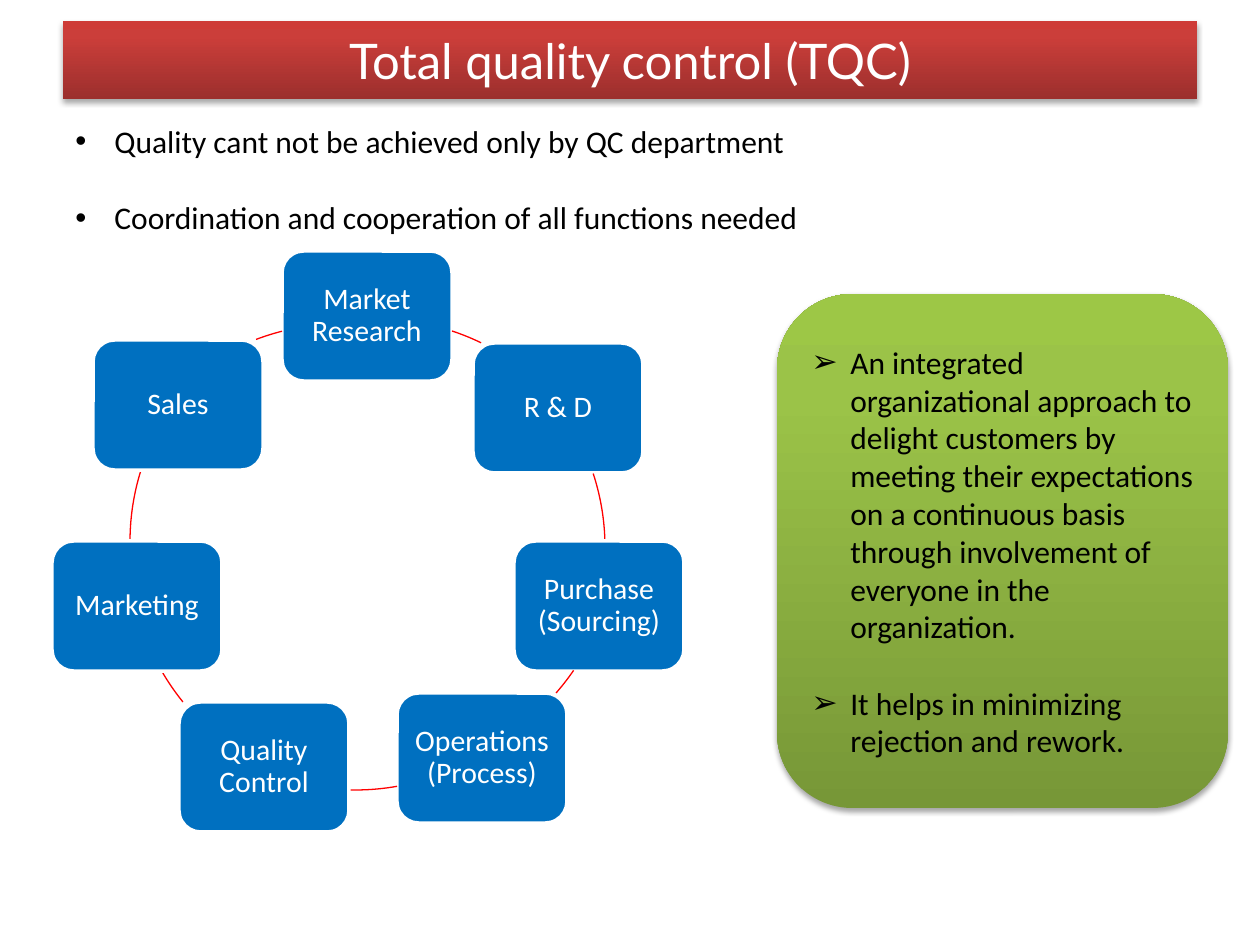
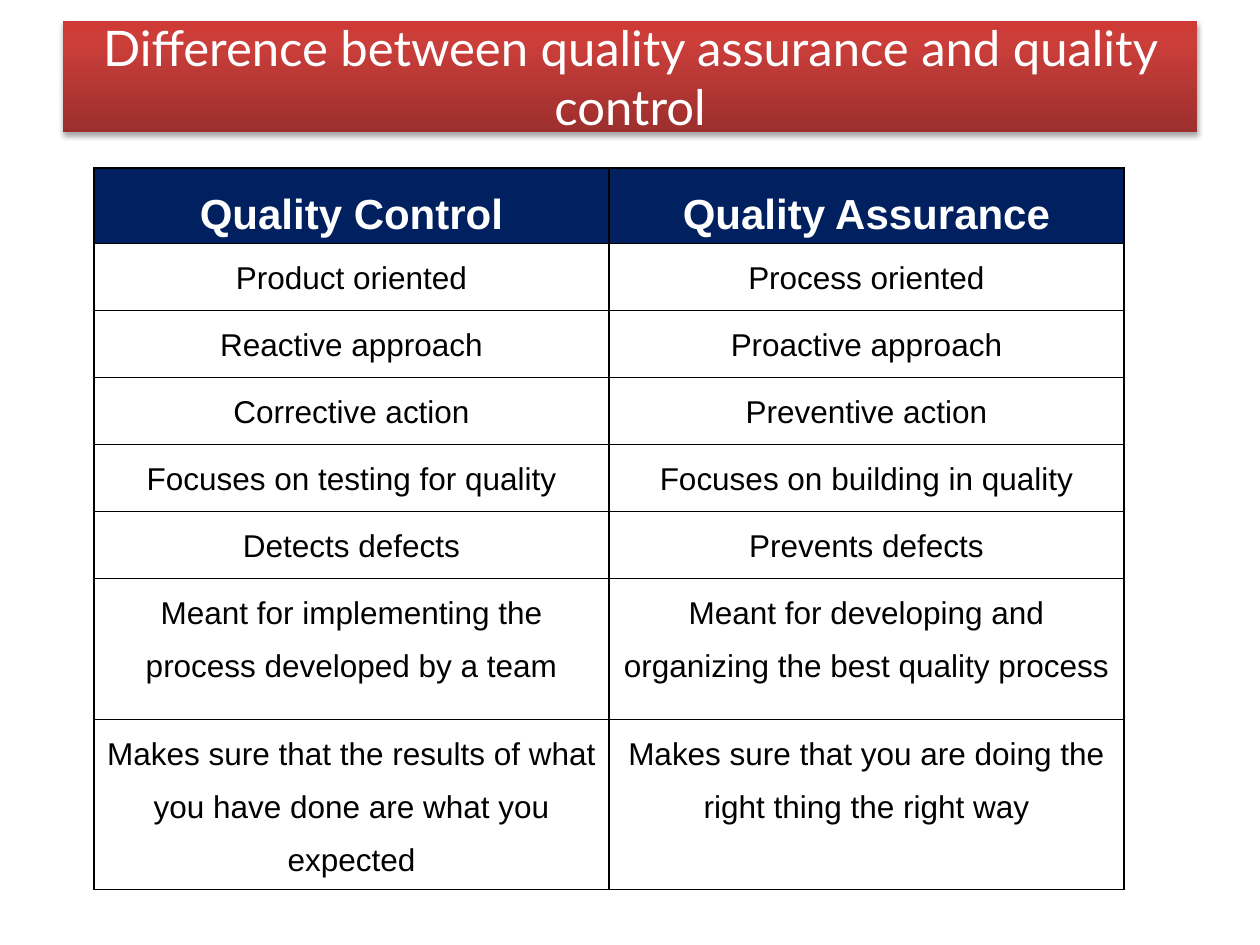
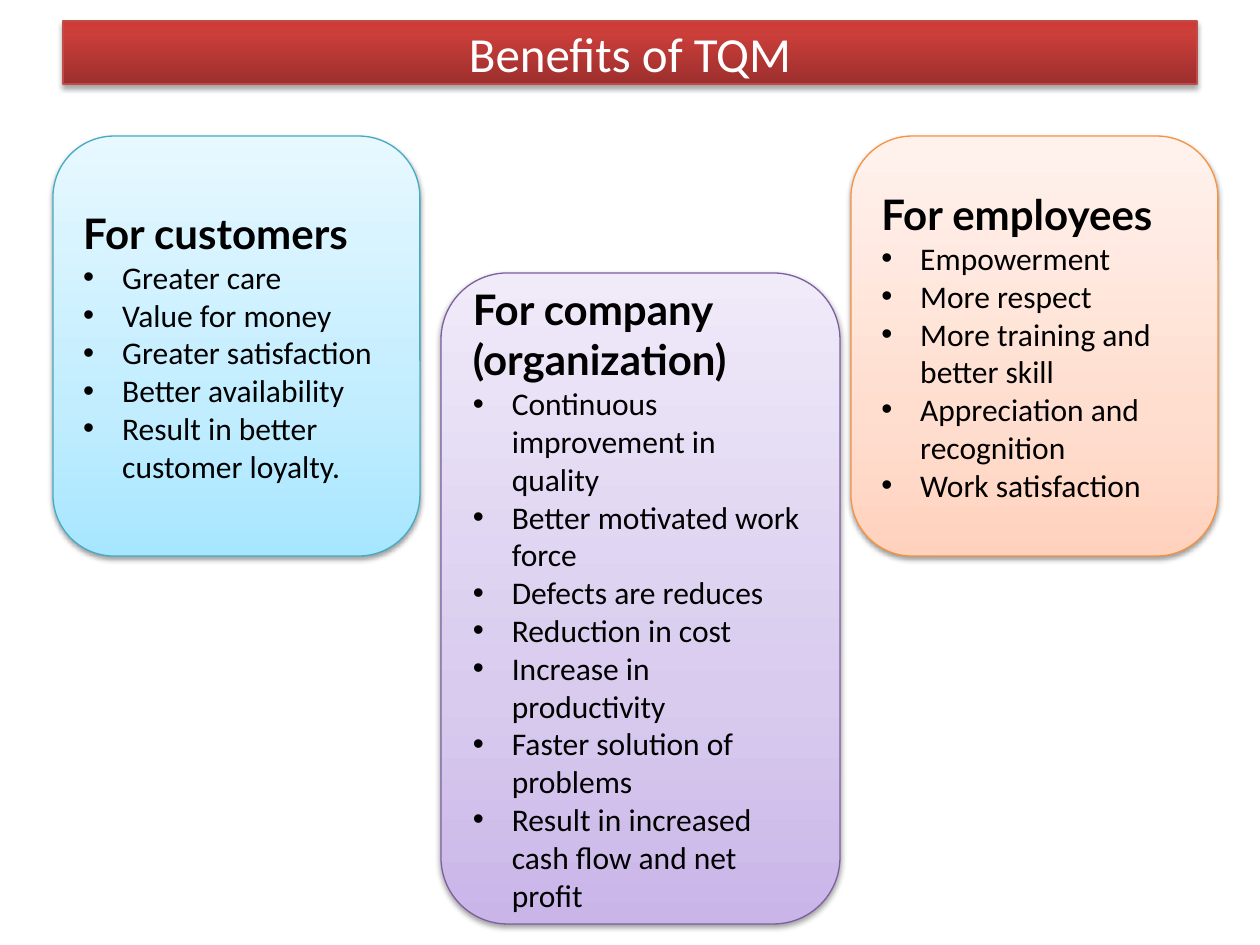
import math

import pptx
import pptx.dml.color
import pptx.enum.shapes
import pptx.enum.text
import pptx.oxml
import pptx.oxml.ns
import pptx.util

SHAPE = pptx.enum.shapes.MSO_SHAPE
ALIGN = pptx.enum.text.PP_ALIGN
ANCHOR = pptx.enum.text.MSO_ANCHOR
qn = pptx.oxml.ns.qn
PX = 914400 // 126

WHITE, BLACK = "FFFFFF", "000000"
STATION_BLUE, RING_RED, HEADER_NAVY = "0070C0", "FF0000", "002060"
TITLE_RED = [(0, "9C2F2D"), (80, "CB3E3A"), (100, "CE3B37")]
GREEN = [(0, "779737"), (80, "9BC348"), (100, "9DC746")]
STRONG_SHADOW = {"alpha": 35, "blur": 3.1, "distance": 1.8}
SOFT_SHADOW = {"alpha": 38, "blur": 3.1, "distance": 1.6}
BULLET_INDENT = 39
LINE_GAP = 22

# Slide 1: left and top of each department, clockwise from the top
TQC_POINTS = [
    "Quality cant not be achieved only by QC department",
    "Coordination and cooperation of all functions needed",
]
TQC_SUMMARY = [
    "An integrated organizational approach to delight customers by meeting their "
    "expectations on a continuous basis through involvement of everyone in the organization.",
    "It helps in minimizing rejection and rework.",
]
STATION_SIZE = (170, 130)
STATIONS = [
    ("Market Research", 282, 251),
    ("R & D", 473, 343),
    ("Purchase (Sourcing)", 514, 541),
    ("Operations (Process)", 397, 693),
    ("Quality Control", 179, 702),
    ("Marketing", 52, 541),
    ("Sales", 93, 340),
]
# Circle corner, start point and end point of the arc after each department
RING_SIZE = 475
ARCS = [
    ((140, 319), (452, 331), (481, 343)),
    ((130, 310), (592, 474), (605, 539)),
    ((140, 299), (573, 670), (556, 693)),
    ((118, 315), (397, 786), (350, 789)),
    ((130, 315), (183, 702), (161, 670)),
    ((130, 304), (130, 539), (141, 470)),
    ((103, 324), (256, 339), (282, 331)),
]

# Slide 2
COMPARISON = [
    ("Quality Control", "Quality Assurance"),
    ("Product oriented", "Process oriented"),
    ("Reactive approach", "Proactive approach"),
    ("Corrective action", "Preventive action"),
    ("Focuses on testing for quality", "Focuses on building in quality"),
    ("Detects defects", "Prevents defects"),
    ("Meant for implementing the process developed by a team",
     "Meant for developing and organizing the best quality process"),
    ("Makes sure that the results of what you have done are what you expected",
     "Makes sure that you are doing the right thing the right way"),
]
COLUMN_WIDTH = 515
ROW_HEIGHTS = [75] + [67] * 5 + [141, 170]

# Slide 3
BENEFITS = [
    {"heading": "For customers", "area": (53, 136, 367, 420), "line": "46AAC5",
     "stops": [(0, "A7E6FF"), (35, "C1EDFF"), (100, "E7F8FF")],
     "items": ["Greater care", "Value for money", "Greater satisfaction",
               "Better availability", "Result in better customer loyalty."]},
    {"heading": "For employees", "area": (851, 136, 367, 420), "line": "F69240",
     "stops": [(0, "FFD2BD"), (35, "FFDED0"), (100, "FFF2ED")],
     "items": ["Empowerment", "More respect", "More training and better skill",
               "Appreciation and recognition", "Work satisfaction"]},
    {"heading": "For company (organization)", "area": (441, 273, 399, 651), "line": "7D60A0",
     "stops": [(0, "C9B5E8"), (35, "D8CBEE"), (100, "F0EAF9")],
     "items": ["Continuous improvement in quality", "Better motivated work force",
               "Defects are reduces", "Reduction in cost", "Increase in productivity",
               "Faster solution of problems",
               "Result in increased cash flow and net profit"]},
]


def color(value):
    return pptx.dml.color.RGBColor.from_string(value)


def emu(*lengths):
    return [length * PX for length in lengths]


def add_child(parent, tag, **attributes):
    child = parent.makeelement(qn(tag), {key: str(value) for key, value in attributes.items()})
    parent.append(child)
    return child


def write(frame, text, size=18, font="Calibri", ink=BLACK, bold=False, align=ALIGN.LEFT,
          bullet=None, before=0, spacing=None):
    """Add one paragraph, using the empty first one when it is free."""
    para = frame.paragraphs[0]
    if para.runs:
        para = frame.add_paragraph()
    if bullet:
        properties = para._p.get_or_add_pPr()
        properties.set("marL", str(BULLET_INDENT * PX))
        properties.set("indent", str(-BULLET_INDENT * PX))
        add_child(properties, "a:buFont", typeface="Arial")
        add_child(properties, "a:buChar", char=bullet)
    para.alignment = align
    if before:
        para.space_before = pptx.util.Pt(before)
    if spacing:
        para.line_spacing = spacing
    span = para.add_run()
    span.text = text
    span.font.size = pptx.util.Pt(size)
    span.font.name = font
    span.font.bold = bold
    span.font.color.rgb = color(ink)


def write_list(frame, items, bullet, gap=0):
    for index, item in enumerate(items):
        write(frame, item, bullet=bullet, before=gap if index else 0)


def add_box(page, kind, area, fill=None, line=None, weight=0.75, shadow=None):
    """Add a shape; fill is a hex colour, a list of gradient stops or None."""
    box = page.shapes.add_shape(kind, *emu(*area))
    box.shadow.inherit = False
    if isinstance(fill, list):
        box.fill.gradient()
        box.fill.gradient_angle = 90
        stops = box._element.spPr.find(".//" + qn("a:gsLst"))
        stops.clear()
        for position, value in fill:
            stop = add_child(stops, "a:gs", pos=position * 1000)
            add_child(stop, "a:srgbClr", val=value)
    elif fill:
        box.fill.solid()
        box.fill.fore_color.rgb = color(fill)
    else:
        box.fill.background()
    if line:
        box.line.color.rgb = color(line)
        box.line.width = pptx.util.Pt(weight)
    else:
        box.line.fill.background()
    if shadow:
        effects = box._element.spPr.find(qn("a:effectLst"))
        outer = add_child(effects, "a:outerShdw", blurRad=pptx.util.Pt(shadow["blur"]),
                          dist=pptx.util.Pt(shadow["distance"]), dir=5400000, rotWithShape=0)
        shade = add_child(outer, "a:srgbClr", val=BLACK)
        add_child(shade, "a:alpha", val=shadow["alpha"] * 1000)
    box.text_frame.word_wrap = True
    box.text_frame.vertical_anchor = ANCHOR.MIDDLE
    return box


def add_page(deck, title, height, top=21, font="Lato", line=None):
    page = deck.slides.add_slide(deck.slide_layouts[6])
    band = add_box(page, SHAPE.RECTANGLE, (63, top, 1134, height), TITLE_RED, line,
                   shadow=STRONG_SHADOW)
    write(band.text_frame, title, size=28, font=font, ink=WHITE, align=ALIGN.CENTER)
    return page


def add_arc(page, corner, start, end):
    arc = add_box(page, SHAPE.ARC, (*corner, RING_SIZE, RING_SIZE), line=RING_RED)
    center_x, center_y = (side + RING_SIZE / 2 for side in corner)
    for index, (x, y) in enumerate((start, end)):
        degrees = math.degrees(math.atan2(y - center_y, x - center_x)) % 360
        arc.adjustments[index] = degrees * 0.6  # 60000 units a degree, scaled by 100000


def add_borders(cell):
    properties = cell._tc.get_or_add_tcPr()
    for side in ("a:lnL", "a:lnR", "a:lnT", "a:lnB"):
        border = add_child(properties, side, w=pptx.util.Pt(1))
        add_child(add_child(border, "a:solidFill"), "a:srgbClr", val=BLACK)


def build_control(deck):
    page = add_page(deck, "Total quality control (TQC)", 78)
    points = page.shapes.add_textbox(*emu(63, 116, 1081, 127))
    points.text_frame.word_wrap = True
    points.text_frame.auto_size = pptx.enum.text.MSO_AUTO_SIZE.SHAPE_TO_FIT_TEXT
    write_list(points.text_frame, TQC_POINTS, "•", LINE_GAP)

    # Ring of departments
    for (name, left, top), arc in zip(STATIONS, ARCS):
        station = add_box(page, SHAPE.ROUNDED_RECTANGLE, (left, top, *STATION_SIZE),
                          STATION_BLUE, WHITE, weight=2)
        frame = station.text_frame
        frame.margin_left, frame.margin_top, frame.margin_right, frame.margin_bottom = emu(9, 9, 9, 9)
        write(frame, name, size=17, ink=WHITE, align=ALIGN.CENTER, spacing=0.9)
        add_arc(page, *arc)

    summary = add_box(page, SHAPE.ROUNDED_RECTANGLE, (777, 294, 451, 514), GREEN,
                      shadow=STRONG_SHADOW)
    write_list(summary.text_frame, TQC_SUMMARY, "➢", LINE_GAP)


def build_comparison(deck):
    page = add_page(deck, "Difference between quality assurance and quality control", 111)
    area = emu(94, 168, 2 * COLUMN_WIDTH, sum(ROW_HEIGHTS))
    table = page.shapes.add_table(len(COMPARISON), 2, *area).table
    table.horz_banding = False
    for column in table.columns:
        column.width = COLUMN_WIDTH * PX
    for row_index, (row, height) in enumerate(zip(table.rows, ROW_HEIGHTS)):
        row.height = height * PX
        header = row_index == 0
        for cell, text in zip(row.cells, COMPARISON[row_index]):
            add_borders(cell)
            cell.margin_left, cell.margin_top, cell.margin_right, cell.margin_bottom = emu(9, 0, 9, 0)
            if header:
                cell.fill.solid()
                cell.fill.fore_color.rgb = color(HEADER_NAVY)
            else:
                cell.fill.background()
            write(cell.text_frame, text, size=24 if header else 18, font="Arial", bold=header,
                  ink=WHITE if header else BLACK, align=ALIGN.CENTER, spacing=1.5)


def build_benefits(deck):
    page = add_page(deck, "Benefits of TQM", 63, font="Calibri", line="BF4C48")
    for group in BENEFITS:
        card = add_box(page, SHAPE.ROUNDED_RECTANGLE, group["area"], group["stops"],
                       group["line"], shadow=SOFT_SHADOW)
        write(card.text_frame, group["heading"], size=24, font="Lato", bold=True)
        write_list(card.text_frame, group["items"], "•")


def main():
    deck = pptx.Presentation()
    deck.slide_width, deck.slide_height = emu(1260, 945)
    build_control(deck)
    build_comparison(deck)
    build_benefits(deck)
    deck.save("out.pptx")


if __name__ == "__main__":
    main()
